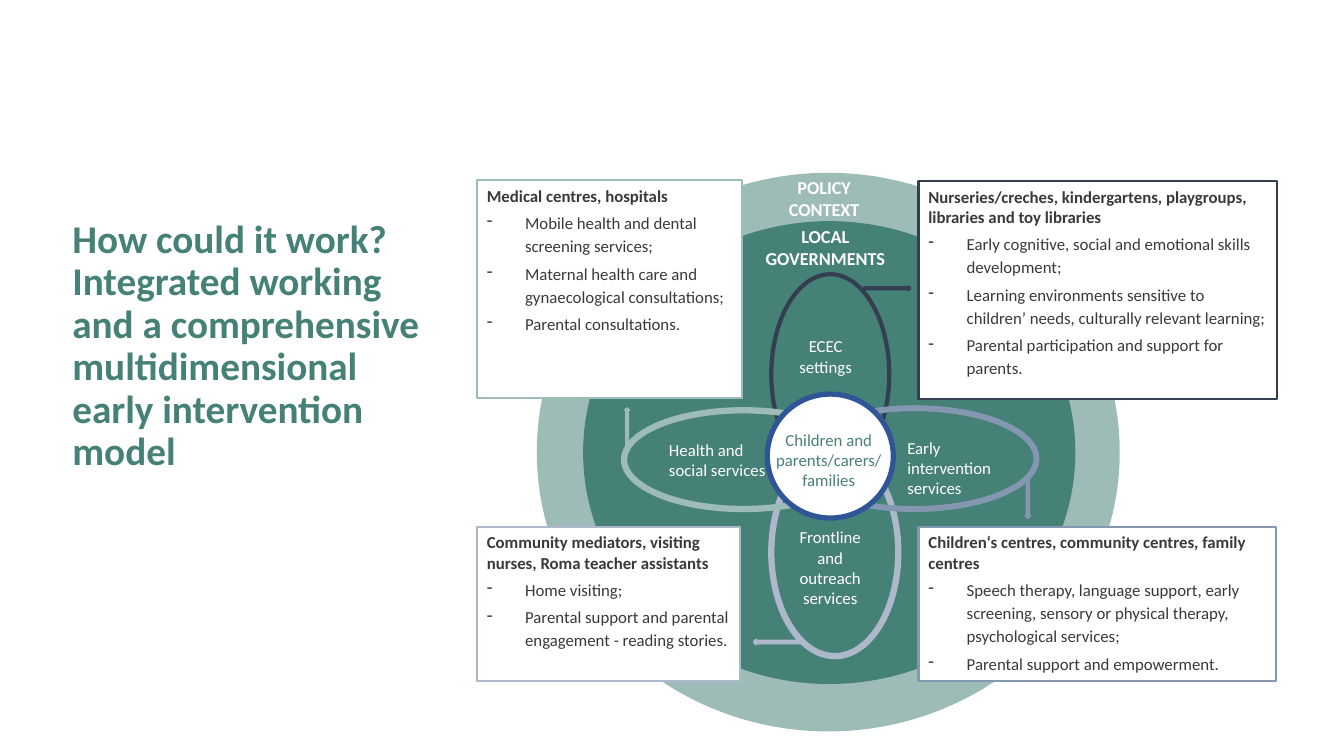
from dataclasses import dataclass
from typing import Optional

from lxml.etree import SubElement
from pptx import Presentation
from pptx.dml.color import RGBColor
from pptx.enum.shapes import MSO_SHAPE
from pptx.enum.text import MSO_ANCHOR, PP_ALIGN
from pptx.oxml.ns import qn
from pptx.util import Inches, Pt

COLOURS = {
    "white": "FFFFFF", "teal": "468177", "sage": "9DBCB7", "mist": "ADB9CA",
    "slate": "8497B0", "navy": "333F50", "blue": "2F5597", "ink": "3B3838",
    "azure": "4F81BD", "sky": "8FAADC", "black": "0D0D0D",
}
Rect = tuple[float, float, float, float]
BULLET_INDENT = 0.38


@dataclass
class Label:
    text: str
    size: int = 12
    colour: str = "white"
    bold: bool = False
    align: PP_ALIGN = PP_ALIGN.CENTER
    anchor: MSO_ANCHOR = MSO_ANCHOR.MIDDLE
    insets: Rect = (0.1, 0.05, 0.1, 0.05)
    line_spacing: float = 1.0


@dataclass
class Figure:
    kind: MSO_SHAPE
    at: Rect
    fill: Optional[str]
    line: str
    weight: float
    label: Optional[Label] = None


@dataclass
class Panel:
    at: Rect
    line: str
    heading: str
    points: list[str]


@dataclass
class Caption:
    at: Rect
    label: Label


TITLE = Caption((0.62, 1.74, 3.66, 4.03), Label(
    "How could it work?\vIntegrated working and a comprehensive "
    "multidimensional early intervention model",
    28, "teal", True, PP_ALIGN.LEFT, MSO_ANCHOR.TOP, (0.1, 0.44, 0, 0.05), 0.9))

RINGS = [
    Figure(MSO_SHAPE.OVAL, (5.35, 1.74, 5.73, 5.49), "sage", "sage", 3.75),
    Figure(MSO_SHAPE.RECTANGLE, (7.5, 1.83, 1.43, 0.27), "sage", "sage", 2,
           Label("POLICY CONTEXT", 13, bold=True, insets=(0.1, 0.05, 0.18, 0.05))),
    Figure(MSO_SHAPE.OVAL, (5.81, 2.22, 4.83, 4.54), "teal", "teal", 3.75),
]

GOVERNMENTS = Caption((7.49, 2.24, 1.49, 0.43), Label(
    "LOCAL GOVERNMENTS", 13, bold=True, insets=(0.02, 0.05, 0.12, 0.05)))

PANELS = [
    Panel((4.73, 1.79, 2.63, 2.16), "sage", "Medical centres, hospitals", [
        "Mobile health and dental screening services;",
        "Maternal health care and gynaecological consultations;",
        "Parental consultations."]),
    Panel((4.73, 5.23, 2.61, 1.53), "mist",
          "Community mediators, visiting nurses, Roma teacher assistants", [
              "Home visiting;",
              "Parental support and parental engagement - reading stories."]),
    Panel((9.11, 5.23, 3.55, 1.53), "slate",
          "Children‘s centres, community centres, family centres", [
              "Speech therapy, language support, early screening, sensory or "
              "physical therapy, psychological services;",
              "Parental support and empowerment."]),
    Panel((9.11, 1.8, 3.56, 2.16), "navy",
          "Nurseries/creches, kindergartens, playgroups, libraries and toy libraries", [
              "Early cognitive, social and emotional skills development;",
              "Learning environments sensitive to children’ needs, "
              "culturally relevant learning;",
              "Parental participation and support for parents."]),
]

PETALS_AND_HUB = [
    Figure(MSO_SHAPE.OVAL, (7.65, 4.45, 1.26, 2.06), None, "mist", 4.5,
           Label("Frontline and outreach services", insets=(0.05, 0.3, 0.14, 0))),
    Figure(MSO_SHAPE.LEFT_ARROW, (7.48, 6.35, 0.47, 0.04), "azure", "mist", 2),
    Figure(MSO_SHAPE.OVAL, (7.65, 2.72, 1.17, 1.99), None, "navy", 3,
           Label("ECEC settings", insets=(0, 0, 0.09, 0.36))),
    Figure(MSO_SHAPE.OVAL, (6.19, 4.07, 2.37, 0.98), None, "sage", 4.5,
           Label("Health and\vsocial services", align=PP_ALIGN.LEFT)),
    Figure(MSO_SHAPE.OVAL, (7.86, 4.05, 2.42, 1), None, "slate", 4.25),
    Figure(MSO_SHAPE.UP_ARROW, (6.2, 4.05, 0.04, 0.38), "sky", "sage", 1.5),
    Figure(MSO_SHAPE.RIGHT_ARROW, (8.57, 2.84, 0.46, 0.04), "black", "navy", 1.5),
    Figure(MSO_SHAPE.DOWN_ARROW, (10.17, 4.73, 0.05, 0.41), "slate", "slate", 1.5),
    Figure(MSO_SHAPE.OVAL, (7.61, 3.91, 1.25, 1.23), "white", "blue", 3.75),
]

INNER_CAPTIONS = [
    Caption((8.9, 4.29, 1.32, 0.55), Label(
        "Early intervention services", align=PP_ALIGN.LEFT, anchor=MSO_ANCHOR.TOP)),
    Caption((7.1, 4.21, 1.83, 0.71), Label(
        "Children and parents/carers/ families", colour="teal",
        anchor=MSO_ANCHOR.TOP, insets=(0.51, 0.05, 0.1, 0.05))),
]


def colour_of(name: str) -> RGBColor:
    return RGBColor.from_string(COLOURS[name])


def apply_format(target, values: dict) -> None:
    for name, value in values.items():
        setattr(target, name, value)


def write_paragraph(paragraph, label: Label, space_after: float = 0) -> None:
    apply_format(paragraph, {"alignment": label.align, "space_after": Pt(space_after),
                             "line_spacing": label.line_spacing})
    paragraph.text = label.text
    for span in paragraph.runs:
        apply_format(span.font, {"name": "Calibri", "size": Pt(label.size),
                                 "bold": label.bold})
        span.font.color.rgb = colour_of(label.colour)


def prepare_frame(frame, label: Label) -> None:
    left, top, right, bottom = map(Inches, label.insets)
    apply_format(frame, {"word_wrap": True, "vertical_anchor": label.anchor,
                         "margin_left": left, "margin_top": top,
                         "margin_right": right, "margin_bottom": bottom})


def write_label(frame, label: Label) -> None:
    prepare_frame(frame, label)
    write_paragraph(frame.paragraphs[0], label)


def add_dash(paragraph) -> None:
    properties = paragraph._p.get_or_add_pPr()
    properties.set("marL", str(Inches(BULLET_INDENT)))
    properties.set("indent", str(-Inches(BULLET_INDENT)))
    SubElement(properties, qn("a:buChar")).set("char", "-")


def draw_figure(page, figure: Figure):
    shape = page.shapes.add_shape(figure.kind, *map(Inches, figure.at))
    shape.shadow.inherit = False
    if figure.fill:
        shape.fill.solid()
        shape.fill.fore_color.rgb = colour_of(figure.fill)
    else:
        shape.fill.background()
    shape.line.color.rgb = colour_of(figure.line)
    shape.line.width = Pt(figure.weight)
    if figure.label:
        write_label(shape.text_frame, figure.label)
    return shape


def draw_caption(page, caption: Caption) -> None:
    box = page.shapes.add_textbox(*map(Inches, caption.at))
    write_label(box.text_frame, caption.label)


def draw_panel(page, panel: Panel) -> None:
    heading = Label(panel.heading, colour="ink", bold=True,
                    align=PP_ALIGN.LEFT, anchor=MSO_ANCHOR.TOP)
    box = draw_figure(page, Figure(MSO_SHAPE.RECTANGLE, panel.at, "white", panel.line, 1.5))
    prepare_frame(box.text_frame, heading)
    write_paragraph(box.text_frame.paragraphs[0], heading, 3)
    for point in panel.points:
        paragraph = box.text_frame.add_paragraph()
        add_dash(paragraph)
        write_paragraph(paragraph, Label(point, colour="ink", align=PP_ALIGN.LEFT,
                                         line_spacing=1.15), 3)


def main() -> None:
    deck = Presentation()
    apply_format(deck, {"slide_width": Inches(13.33), "slide_height": Inches(7.5)})
    page = deck.slides.add_slide(deck.slide_layouts[6])
    draw_caption(page, TITLE)
    for ring in RINGS:
        draw_figure(page, ring)
    draw_caption(page, GOVERNMENTS)
    for panel in PANELS:
        draw_panel(page, panel)
    for figure in PETALS_AND_HUB:
        draw_figure(page, figure)
    for caption in INNER_CAPTIONS:
        draw_caption(page, caption)
    deck.save("out.pptx")


if __name__ == "__main__":
    main()
